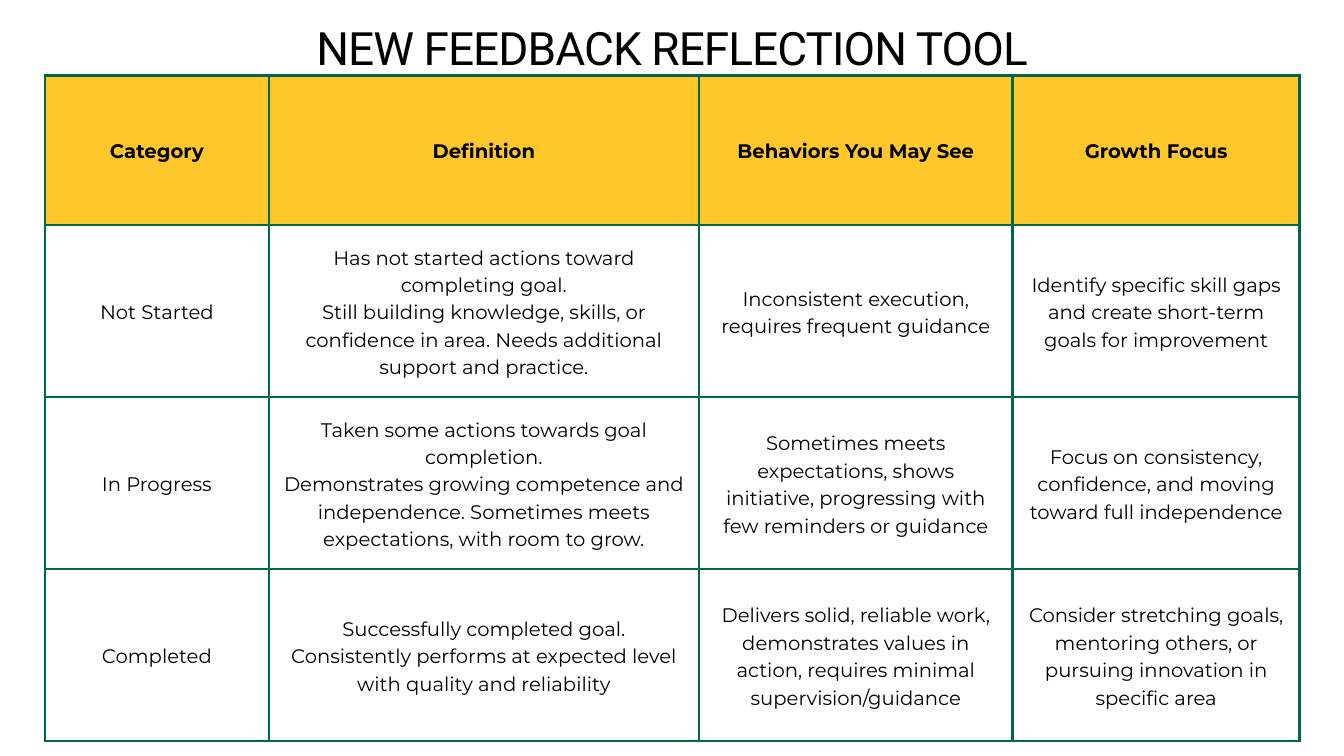
from lxml import etree
from pptx import Presentation
from pptx import util as u
from pptx.dml.color import RGBColor
from pptx.enum import text
from pptx.oxml import ns

COLORS = {"gold": "FFC72C", "green": "006747", "black": "000000"}

COLUMN_WIDTHS = [3.33, 6.4, 4.67, 4.27]
ROW_HEIGHTS = [2.23, 2.56, 2.56, 2.56]
ROWS = [
    ["Category", "Definition", "Behaviors You May See", "Growth Focus"],
    ["Not Started",
     "Has not started actions toward completing goal.\n"
     "Still building knowledge, skills, or confidence in area. "
     "Needs additional support and practice.",
     "Inconsistent execution, requires frequent guidance",
     "Identify specific skill gaps and create short-term goals for improvement"],
    ["In Progress",
     "Taken some actions towards goal completion.\n"
     "Demonstrates growing competence and independence. "
     "Sometimes meets expectations, with room to grow.",
     "Sometimes meets expectations, shows initiative, "
     "progressing with few reminders or guidance",
     "Focus on consistency, confidence, and moving toward full independence"],
    ["Completed",
     "Successfully completed goal.\n"
     "Consistently performs at expected level with quality and reliability",
     "Delivers solid, reliable work, demonstrates values in action, "
     "requires minimal supervision/guidance",
     "Consider stretching goals, mentoring others, "
     "or pursuing innovation in specific area"],
]


class SlideBuilder:
    title_font, body_font = "Roboto", "Montserrat"
    border_width, cell_margin = u.Pt(3), u.Inches(0.21)

    def __init__(self, slide):
        self.s = slide

    def style(self, p, font, size, spacing, bold=False):
        p.alignment = text.PP_ALIGN.CENTER
        p.line_spacing = u.Pt(spacing)
        p.font.name, p.font.size, p.font.bold = font, u.Pt(size), bold
        p.font.color.rgb = RGBColor.from_string(COLORS["black"])

    def title(self, wording, left, top, width, height):
        box = self.s.shapes.add_textbox(*map(u.Inches, (left, top, width, height)))
        tf = box.text_frame
        tf.word_wrap = True
        tf.auto_size = text.MSO_AUTO_SIZE.SHAPE_TO_FIT_TEXT
        tf.margin_left = tf.margin_right = tf.margin_top = tf.margin_bottom = 0
        p = tf.paragraphs[0]
        r = p.add_run()
        r.text = wording
        self.style(p, self.title_font, 49.2, 68.9)
        # Letter spacing in hundredths of a point
        r.font._element.set("spc", "-100")

    def borders(self, cell):
        tc_pr = cell._tc.get_or_add_tcPr()
        for side in ("a:lnL", "a:lnR", "a:lnT", "a:lnB"):
            ln = etree.SubElement(tc_pr, ns.qn(side), w=str(self.border_width))
            fill = etree.SubElement(ln, ns.qn("a:solidFill"))
            etree.SubElement(fill, ns.qn("a:srgbClr"), val=COLORS["green"])

    def cell(self, cell, wording, header):
        cell.text = wording
        cell.vertical_anchor = text.MSO_ANCHOR.MIDDLE
        cell.margin_left = cell.margin_right = self.cell_margin
        cell.margin_top = cell.margin_bottom = self.cell_margin
        for p in cell.text_frame.paragraphs:
            self.style(p, self.body_font, 21, 29.4, header)
        self.borders(cell)
        if header:
            cell.fill.solid()
            cell.fill.fore_color.rgb = RGBColor.from_string(COLORS["gold"])
        else:
            cell.fill.background()

    def table(self, rows, left, top, widths, heights):
        frame = self.s.shapes.add_table(
            len(heights), len(widths), u.Inches(left), u.Inches(top),
            u.Inches(sum(widths)), u.Inches(sum(heights)))
        table = frame.table
        table.horz_banding = False
        for column, width in zip(table.columns, widths):
            column.width = u.Inches(width)
        for row, height in zip(table.rows, heights):
            row.height = u.Inches(height)
        for i, row in enumerate(rows):
            for j, wording in enumerate(row):
                self.cell(table.cell(i, j), wording, header=i == 0)


def main():
    prs = Presentation()
    prs.slide_width, prs.slide_height = u.Inches(20), u.Inches(11.25)
    builder = SlideBuilder(prs.slides.add_slide(prs.slide_layouts[6]))

    # Reflection table
    builder.table(ROWS, 0.67, 1.12, COLUMN_WIDTHS, ROW_HEIGHTS)

    # Heading
    builder.title("NEW FEEDBACK REFLECTION TOOL", 3.8, 0.15, 12.4, 0.92)

    prs.save("out.pptx")


if __name__ == "__main__":
    main()
